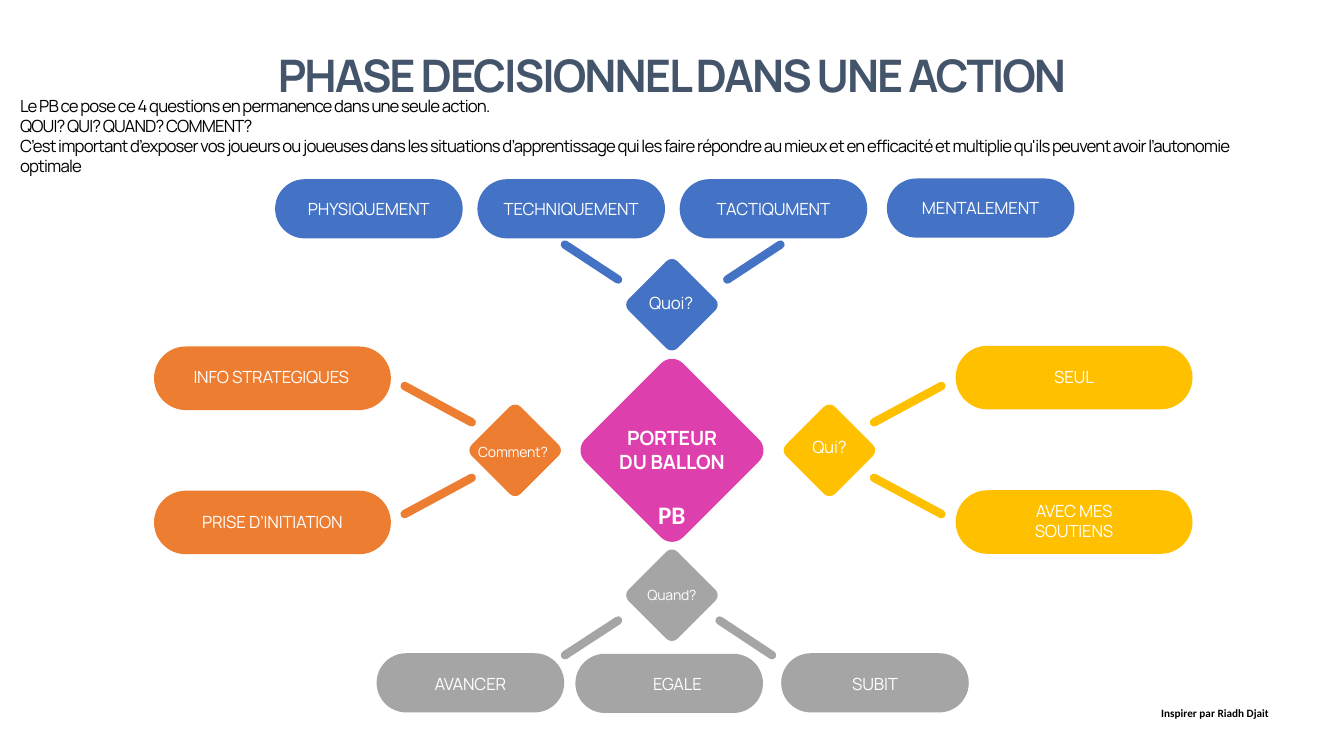
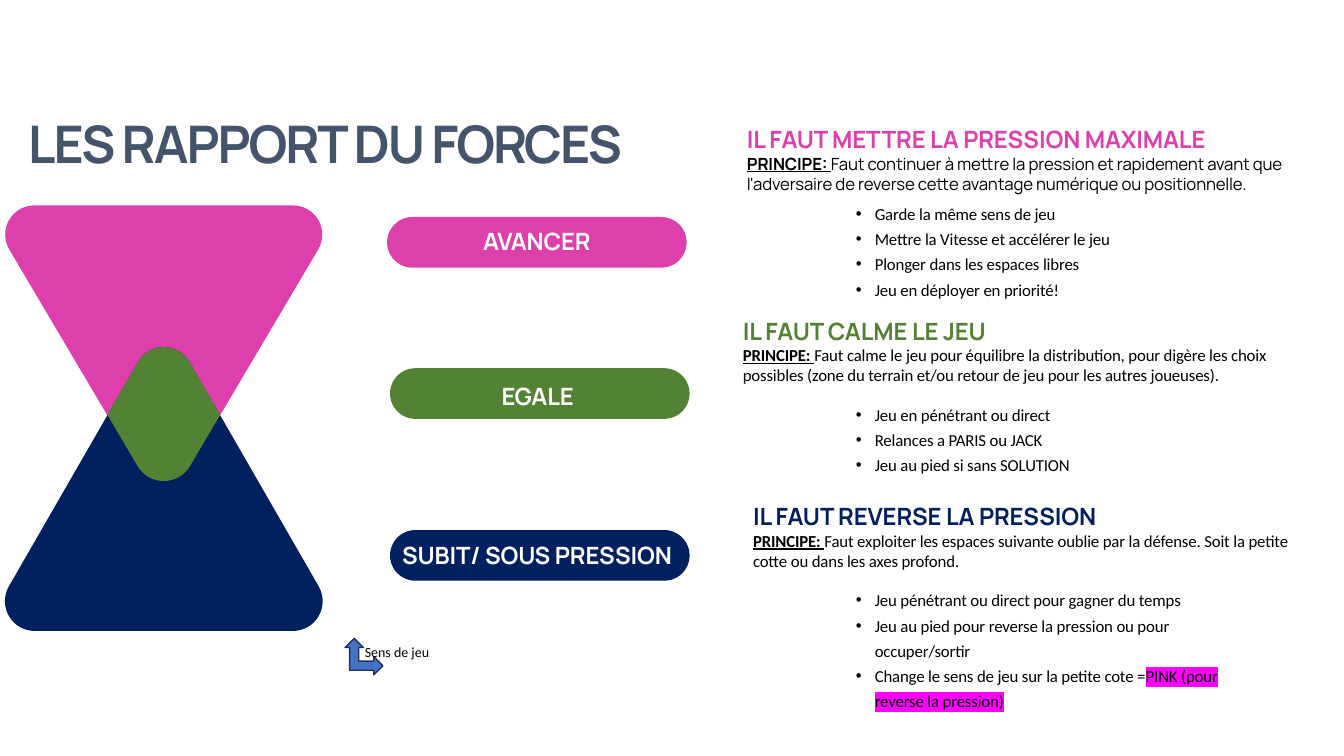
from dataclasses import dataclass
from math import hypot

from lxml import etree
from pptx import Presentation
from pptx.dml.color import RGBColor
from pptx.enum.shapes import MSO_CONNECTOR, MSO_SHAPE
from pptx.enum.text import MSO_ANCHOR, PP_ALIGN
from pptx.oxml.ns import qn
from pptx.util import Pt

PILL = MSO_SHAPE.ROUNDED_RECTANGLE
BENT_ARROW = MSO_SHAPE.LEFT_UP_ARROW
STRAIGHT = MSO_CONNECTOR.STRAIGHT
TOP, MIDDLE, BOTTOM = MSO_ANCHOR.TOP, MSO_ANCHOR.MIDDLE, MSO_ANCHOR.BOTTOM
LEFT, CENTER = PP_ALIGN.LEFT, PP_ALIGN.CENTER
FLUSH = (0, 0, 0, 0)


@dataclass(frozen=True)
class Theme:
    display: str = "Manrope"
    body: str = "Calibri"
    title: str = "44546A"
    ink: str = "000000"
    white: str = "FFFFFF"
    pink: str = "DD3FAC"
    blue: str = "4472C4"
    grey: str = "A5A5A5"
    orange: str = "ED7D31"
    yellow: str = "FFC000"
    green: str = "548235"
    navy: str = "002060"
    arrow_edge: str = "1E3256"
    marker: str = "FF00FF"
    credit_size: float = 8
    small_size: float = 10
    text_size: float = 12
    core_size: float = 14
    heading_size: float = 17
    initials_size: float = 18
    bullet_line: float = 18
    title_spacing: float = -1.45
    intro_spacing: float = -0.6
    heading_spacing: float = -0.12
    spacing: float = -0.1


THEME = Theme()


@dataclass(frozen=True)
class Span:
    text: str
    size: float = THEME.text_size
    font: str = THEME.display
    color: str = THEME.ink
    bold: bool = False
    underline: bool = False
    spacing: float = THEME.spacing
    highlight: str = ""


@dataclass(frozen=True)
class Branch:
    color: str
    question: Span
    margins: tuple
    center: tuple
    pill_size: tuple
    pills: tuple
    spokes: tuple


@dataclass(frozen=True)
class Situation:
    color: str
    name: str
    pill: tuple
    margins: tuple
    heading: str
    principle: str
    principle_font: str
    heading_box: tuple
    bullets: tuple
    bullet_box: tuple


def question(text, size):
    return Span(text, size, color=THEME.white)


def plain(text, highlight=""):
    return Span(text, font=THEME.body, highlight=highlight)


SMALL_PILL, WIDE_PILL = (134, 42.3), (169.2, 45.4)
CORE_CENTER = (480, 321.7)
BRANCHES = (
    Branch(THEME.blue, question("Quoi?", THEME.text_size), (0, 0, 1, 3.5), (480, 217.7), SMALL_PILL,
           (("PHYSIQUEMENT", 196.5, 128, FLUSH), ("TECHNIQUEMENT", 341, 128, FLUSH),
            ("TACTIQUMENT", 485.5, 128, FLUSH), ("MENTALEMENT", 633.5, 127.5, FLUSH)),
           ((-38.5, -18, -76.5, -43), (39.5, -18, 77.5, -43))),
    Branch(THEME.grey, question("Quand?", THEME.small_size), FLUSH, (480, 425.2), SMALL_PILL,
           (("AVANCER", 269, 466.6, (0, 1, 0, 0)), ("EGALE", 411, 467, (12, 0, 0, 0)),
            ("SUBIT", 558, 466.6, (0, 1, 0, 0))),
           ((-38.5, 18, -76.5, 42.8), (34, 18, 71.5, 42.8))),
    Branch(THEME.orange, question("Comment?", THEME.small_size), (0, 2, 3, 0), (368, 321.7), WIDE_PILL,
           (("INFO STRATEGIQUES", 110, 247.5, (0, 0, 1.5, 2)),
            ("PRISE D’INITIATION", 110, 350.5, (0, 0, 0, 1))),
           ((-31, -20, -79, -46), (-31, 19.6, -79, 45.5))),
    Branch(THEME.yellow, question("Qui?", THEME.text_size), (0, 0, 0, 5), (592.5, 321.7), WIDE_PILL,
           (("SEUL", 682.6, 247, (0, 0, 0, 1.5)), ("AVEC MES SOUTIENS", 682.6, 350.2, (24, 0, 24, 2))),
           ((31.8, -20, 80, -46), (31.8, 19.6, 80, 45.5))),
)
SITUATIONS = (
    Situation(THEME.pink, "AVANCER", (276.5, 155), (0, 0, 0, 1.5),
              "IL FAUT METTRE LA PRESSION MAXIMALE",
              "Faut continuer à mettre la pression et rapidement avant que l'adversaire de reverse "
              "cette avantage numérique ou positionnelle.",
              THEME.display, (526.5, 70.5, 426, 71.5),
              ((plain("Garde la même sens de jeu"),),
               (plain("Mettre la Vitesse et accélérer le jeu"),),
               (plain("Plonger dans les espaces libres"),),
               (plain("Jeu en déployer en priorité!"),)),
              (604.3, 138.3, 281, 79)),
    Situation(THEME.green, "EGALE", (278.6, 263), (0, 3, 3, 0), "IL FAUT CALME LE JEU",
              "Faut calme le jeu pour équilibre la distribution, pour digère les choix possibles "
              "(zone du terrain et/ou retour de jeu pour les autres joueuses).",
              THEME.body, (523.5, 221.6, 414, 57),
              ((plain("Jeu en pénétrant ou direct"),),
               (plain("Relances a PARIS ou JACK"),),
               (plain("Jeu au pied si sans SOLUTION"),)),
              (604.3, 281.7, 222.5, 60.5)),
    Situation(THEME.navy, "SUBIT/ SOUS PRESSION", (278.6, 378.6), (0, 0, 4, 0),
              "IL FAUT REVERSE LA PRESSION",
              "Faut exploiter les espaces suivante oublie par la défense. Soit la petite cotte ou "
              "dans les axes profond.",
              THEME.body, (530.8, 354.3, 406, 57),
              ((plain("Jeu pénétrant ou direct pour gagner du temps"),),
               (plain("Jeu au pied pour reverse la pression ou pour occuper/sortir"),),
               (plain("Change le sens de jeu sur la petite cote ="),
                plain("PINK (pour reverse la pression)", THEME.marker))),
              (604.3, 414.4, 307.5, 97)),
)


def rgb(color):
    return RGBColor.from_string(color)


def add_span(para, span):
    run = para.add_run()
    run.text = span.text
    font = run.font
    font.size, font.name = Pt(span.size), span.font
    font.bold, font.underline = span.bold, span.underline
    font.color.rgb = rgb(span.color)
    properties = run._r.get_or_add_rPr()
    properties.set("spc", str(round(span.spacing * 100)))
    if span.highlight:
        mark = etree.Element(qn("a:highlight"))
        etree.SubElement(mark, qn("a:srgbClr")).set("val", span.highlight)
        properties.find(qn("a:latin")).addprevious(mark)


def add_bullet(para):
    properties = para._p.get_or_add_pPr()
    properties.set("marL", str(Pt(13.5)))
    properties.set("indent", str(-Pt(13.5)))
    etree.SubElement(properties, qn("a:buFont")).set("typeface", "Arial")
    etree.SubElement(properties, qn("a:buChar")).set("char", "•")
    para.line_spacing = Pt(THEME.bullet_line)


def write(shape, paragraphs, align=LEFT, anchor=TOP, margins=(7.2, 3.6, 7.2, 3.6), bullets=False):
    frame = shape.text_frame
    frame.word_wrap = True
    frame.vertical_anchor = anchor
    (frame.margin_left, frame.margin_top,
     frame.margin_right, frame.margin_bottom) = (Pt(margin) for margin in margins)
    for index, spans in enumerate(paragraphs):
        para = frame.add_paragraph() if index else frame.paragraphs[0]
        if bullets:
            add_bullet(para)
        para.alignment = align
        for span in spans:
            add_span(para, span)


def add_text(page, box, paragraphs, **layout):
    write(page.shapes.add_textbox(*(Pt(length) for length in box)), paragraphs, **layout)


def add_title(page, box, text, size):
    span = Span(text, size, color=THEME.title, bold=True, spacing=THEME.title_spacing)
    add_text(page, box, [[span]], align=CENTER, anchor=BOTTOM)


def paint(shape, color):
    shape.shadow.inherit = False
    shape.fill.solid()
    shape.fill.fore_color.rgb = rgb(color)
    shape.line.fill.background()


def add_pill(page, box, color, span, margins):
    pill = page.shapes.add_shape(PILL, *(Pt(length) for length in box))
    pill.adjustments[0] = 0.5
    paint(pill, color)
    write(pill, [[span]], align=CENTER, anchor=MIDDLE, margins=margins)


def toward(start, end, distance):
    share = distance / hypot(end[0] - start[0], end[1] - start[1])
    return tuple(a + (b - a) * share for a, b in zip(start, end))


def round_corner(before, corner, after, cut, pull):
    if not cut:
        return [corner]
    first, last = toward(corner, before, cut), toward(corner, after, cut)
    return [first, toward(first, corner, cut * pull), toward(last, corner, cut * pull), last]


def bend(segments):
    curve = etree.Element(qn("a:cubicBezTo"))
    segments[0].addprevious(curve)
    for segment in segments:
        curve.append(segment[0])
        segment.getparent().remove(segment)


def add_rounded_polygon(page, corners, cuts, color, pull):
    points, bends = [], []
    for index, corner in enumerate(corners):
        after = corners[(index + 1) % len(corners)]
        if cuts[index]:
            bends.append(len(points))
        points += round_corner(corners[index - 1], corner, after, cuts[index], pull)
    outline = [(Pt(x), Pt(y)) for x, y in points]
    builder = page.shapes.build_freeform(*outline[0])
    builder.add_line_segments(outline[1:], close=True)
    shape = builder.convert_to_shape()
    segments = list(shape._element.iter(qn("a:lnTo")))
    for start in bends:
        bend(segments[start:start + 3])
    paint(shape, color)
    return shape


def add_diamond(page, center, half, color, span, margins):
    x, y = center
    corners = [(x, y - half), (x + half, y), (x, y + half), (x - half, y)]
    diamond = add_rounded_polygon(page, corners, [0.16 * half] * 4, color, 0.55)
    write(diamond, [[span]], align=CENTER, anchor=MIDDLE, margins=margins)


def add_spoke(page, start, end, color):
    spoke = page.shapes.add_connector(STRAIGHT, *(Pt(length) for length in (*start, *end)))
    spoke.line.color.rgb = rgb(color)
    spoke.line.width = Pt(6)
    spoke.line._get_or_add_ln().set("cap", "rnd")
    etree.SubElement(spoke._element.spPr, qn("a:effectLst"))


def add_branch(page, branch):
    x, y = branch.center
    add_diamond(page, branch.center, 35, branch.color, branch.question, branch.margins)
    for name, left, top, margins in branch.pills:
        add_pill(page, (left, top, *branch.pill_size), branch.color,
                 Span(name, color=THEME.white), margins)
    for near_x, near_y, far_x, far_y in branch.spokes:
        add_spoke(page, (x + near_x, y + near_y), (x + far_x, y + far_y), branch.color)


def add_hourglass(page, left, top):
    right, axis = left + 258, left + 129
    upper_tip, waist, lower_tip, base = top + 80, top + 149.5, top + 218, top + 304
    cut, pull = 37, 0.45
    upper = [(left, top), (right, top), (axis, lower_tip)]
    lower = [(axis, upper_tip), (right, base), (left, base)]
    overlap = [(axis, upper_tip), (axis + 40.3, waist), (axis, lower_tip), (axis - 40.3, waist)]
    for corners, cuts, color in ((upper, (cut, cut, cut), THEME.pink),
                                 (lower, (cut, cut, cut), THEME.navy),
                                 (overlap, (cut, 0, cut, 0), THEME.green)):
        add_rounded_polygon(page, corners, cuts, color, pull)


def add_situation(page, situation):
    name = Span(situation.name, THEME.heading_size, color=THEME.white, bold=True,
                spacing=THEME.heading_spacing)
    add_pill(page, (*situation.pill, 214, 36.2), situation.color, name, situation.margins)
    heading = Span(situation.heading, THEME.heading_size, color=situation.color, bold=True,
                   spacing=THEME.heading_spacing)
    label = Span("PRINCIPE: ", font=situation.principle_font, bold=True, underline=True,
                 spacing=THEME.heading_spacing)
    principle = Span(situation.principle, font=situation.principle_font,
                     spacing=THEME.heading_spacing)
    add_text(page, situation.heading_box, [[heading], [label, principle]], anchor=BOTTOM)
    add_text(page, situation.bullet_box, situation.bullets, bullets=True)


def add_play_direction(page, left, top):
    arrow = page.shapes.add_shape(BENT_ARROW, Pt(left), Pt(top), Pt(26), Pt(27))
    paint(arrow, THEME.blue)
    arrow.line.color.rgb = rgb(THEME.arrow_edge)
    arrow.line.width = Pt(1)
    arrow.rotation = 90
    label = Span("Sens de jeu", THEME.small_size, THEME.body, spacing=0)
    add_text(page, (left + 6.5, top + 0.5, 102, 19.5), [[label]])


def build_decision_page(page):
    add_title(page, (60, 30.2, 840, 46), "PHASE DECISIONNEL DANS UNE ACTION", 32)
    intro = (
        "Le PB ce pose ce 4 questions en permanence dans une seule action.",
        "QOUI? QUI? QUAND? COMMENT?",
        "C’est important d’exposer vos joueurs ou joueuses dans les situations d’apprentissage qui les "
        "faire répondre au mieux et en efficacité et multiplie qu'ils peuvent avoir l’autonomie optimale",
    )
    add_text(page, (7.2, 64.7, 891, 65.5),
             [[Span(line, spacing=THEME.intro_spacing)] for line in intro])
    core = Span("PORTEUR DU BALLON", THEME.core_size, color=THEME.white, bold=True)
    add_diamond(page, CORE_CENTER, 70, THEME.pink, core, (26, 0, 26, 1))
    initials = Span("PB", THEME.initials_size, THEME.body, THEME.white, bold=True, spacing=0)
    add_text(page, (463, 353.2, 55.5, 29), [[initials]])
    for branch in BRANCHES:
        add_branch(page, branch)
    credit = Span("Inspirer par Riadh Djait", THEME.credit_size, THEME.body, bold=True, spacing=0)
    add_text(page, (822.3, 501, 137.5, 17), [[credit]])


def build_balance_page(page):
    add_title(page, (7.2, 75.5, 450, 52), "LES RAPPORT DU FORCES", 37)
    add_hourglass(page, -12, 146.7)
    for situation in SITUATIONS:
        add_situation(page, situation)
    add_play_direction(page, 247, 455.5)


def main():
    deck = Presentation()
    deck.slide_width, deck.slide_height = Pt(960), Pt(540)
    for build in (build_decision_page, build_balance_page):
        build(deck.slides.add_slide(deck.slide_layouts[6]))
    deck.save("out.pptx")


if __name__ == "__main__":
    main()
